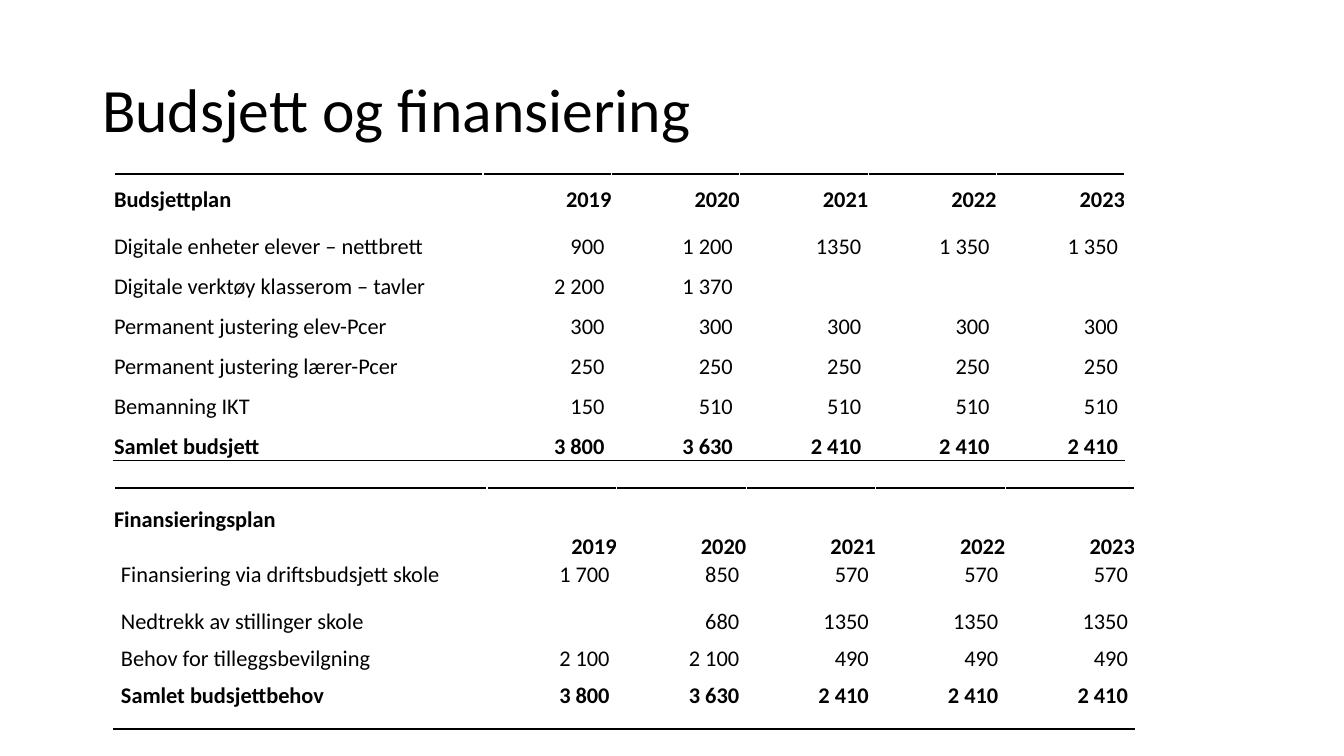
"""Build the budget and financing slide with its two yearly tables."""
from lxml.etree import SubElement
from pptx import Presentation
from pptx.dml.color import RGBColor
from pptx.enum.text import MSO_ANCHOR as Anchor, MSO_AUTO_SIZE as AutoSize, PP_ALIGN as Align
from pptx.oxml import parse_xml
from pptx.oxml.ns import nsdecls, qn
from pptx.util import Pt

COLORS = {"text": "000000", "rule": "000000"}
FONT = "Calibri"
TITLE = "Budsjett og finansiering"
YEARS = ["2019", "2020", "2021", "2022", "2023"]

FINANCING = {
    "rows": [
        ["Finansieringsplan", *YEARS],
        ["Finansiering via driftsbudsjett skole", "1 700", "850", "570", "570", "570"],
        ["Nedtrekk av stillinger skole", "", "680", "1350", "1350", "1350"],
        ["Behov for tilleggsbevilgning", "2 100", "2 100", "490", "490", "490"],
        ["Samlet budsjettbehov", "3 800", "3 630", "2 410", "2 410", "2 410"],
    ],
    "top": 488, "width": 1021, "label_width": 373,
    "heights": [73, 47, 37, 37, 47],
    "anchor": Anchor.TOP, "label_inset": 7, "heading_lift": 27,
}
BUDGET = {
    "rows": [
        ["Budsjettplan", *YEARS],
        ["Digitale enheter elever – nettbrett", "900", "1 200", "1350", "1 350", "1 350"],
        ["Digitale verktøy klasserom – tavler", "2 200", "1 370", "", "", ""],
        ["Permanent justering elev-Pcer", "300", "300", "300", "300", "300"],
        ["Permanent justering lærer-Pcer", "250", "250", "250", "250", "250"],
        ["Bemanning IKT", "150", "510", "510", "510", "510"],
        ["Samlet budsjett", "3 800", "3 630", "2 410", "2 410", "2 410"],
    ],
    "top": 174, "width": 1011, "label_width": 369,
    "heights": [40, 47, 40, 40, 40, 40, 40],
    "anchor": Anchor.BOTTOM, "label_inset": 0, "heading_lift": 0,
}
TABLE_LEFT = 114
VALUE_INSET = 7


def px(length):
    return round(length * 914400 / 100.8)


def add_run(paragraph, words, size, bold=False):
    run = paragraph.add_run()
    run.text = words
    run.font.name = FONT
    run.font.size = Pt(size)
    run.font.bold = bold
    run.font.color.rgb = RGBColor.from_string(COLORS["text"])


def add_rule(cell, side):
    rule = parse_xml(f'<a:{side} {nsdecls("a")} w="{Pt(1)}"/>')
    fill = SubElement(rule, qn("a:solidFill"))
    SubElement(fill, qn("a:srgbClr"), val=COLORS["rule"])
    cell._tc.get_or_add_tcPr().insert(0, rule)


def add_plan(slide, plan):
    rows = plan["rows"]
    last = len(rows) - 1
    table = slide.shapes.add_table(
        len(rows), len(rows[0]), px(TABLE_LEFT), px(plan["top"]),
        px(plan["width"]), px(sum(plan["heights"]))).table
    table.first_row = table.horz_banding = False
    year_width = (plan["width"] - plan["label_width"]) / len(YEARS)
    for c, column in enumerate(table.columns):
        column.width = px(year_width if c else plan["label_width"])
    for r, entries in enumerate(rows):
        table.rows[r].height = px(plan["heights"][r])
        for c, entry in enumerate(entries):
            cell = table.cell(r, c)
            cell.fill.background()
            inset = 0 if r == 0 else VALUE_INSET if c else plan["label_inset"]
            cell.margin_left = cell.margin_right = px(inset)
            cell.margin_top = 0
            cell.margin_bottom = px(plan["heading_lift"]) if r == c == 0 else 0
            cell.vertical_anchor = Anchor.BOTTOM if r == 0 else plan["anchor"]
            paragraph = cell.text_frame.paragraphs[0]
            paragraph.alignment = Align.RIGHT if c else Align.LEFT
            if entry:
                add_run(paragraph, entry, 16, r in (0, last))
            if r == 0:
                add_rule(cell, "lnT")
            if r == last:
                add_rule(cell, "lnB")


def main():
    deck = Presentation()
    deck.slide_width, deck.slide_height = px(1344), px(756)
    slide = deck.slides.add_slide(deck.slide_layouts[5])
    title = slide.shapes.title
    title.left, title.top, title.width, title.height = map(px, (92, 40, 1159, 146))
    frame = title.text_frame
    frame.auto_size = AutoSize.NONE
    frame.word_wrap = True
    frame.vertical_anchor = Anchor.MIDDLE
    heading = frame.paragraphs[0]
    heading.alignment = Align.LEFT
    heading.line_spacing = 0.9
    add_run(heading, TITLE, 44)
    for plan in (FINANCING, BUDGET):
        add_plan(slide, plan)
    deck.save("out.pptx")


if __name__ == "__main__":
    main()
